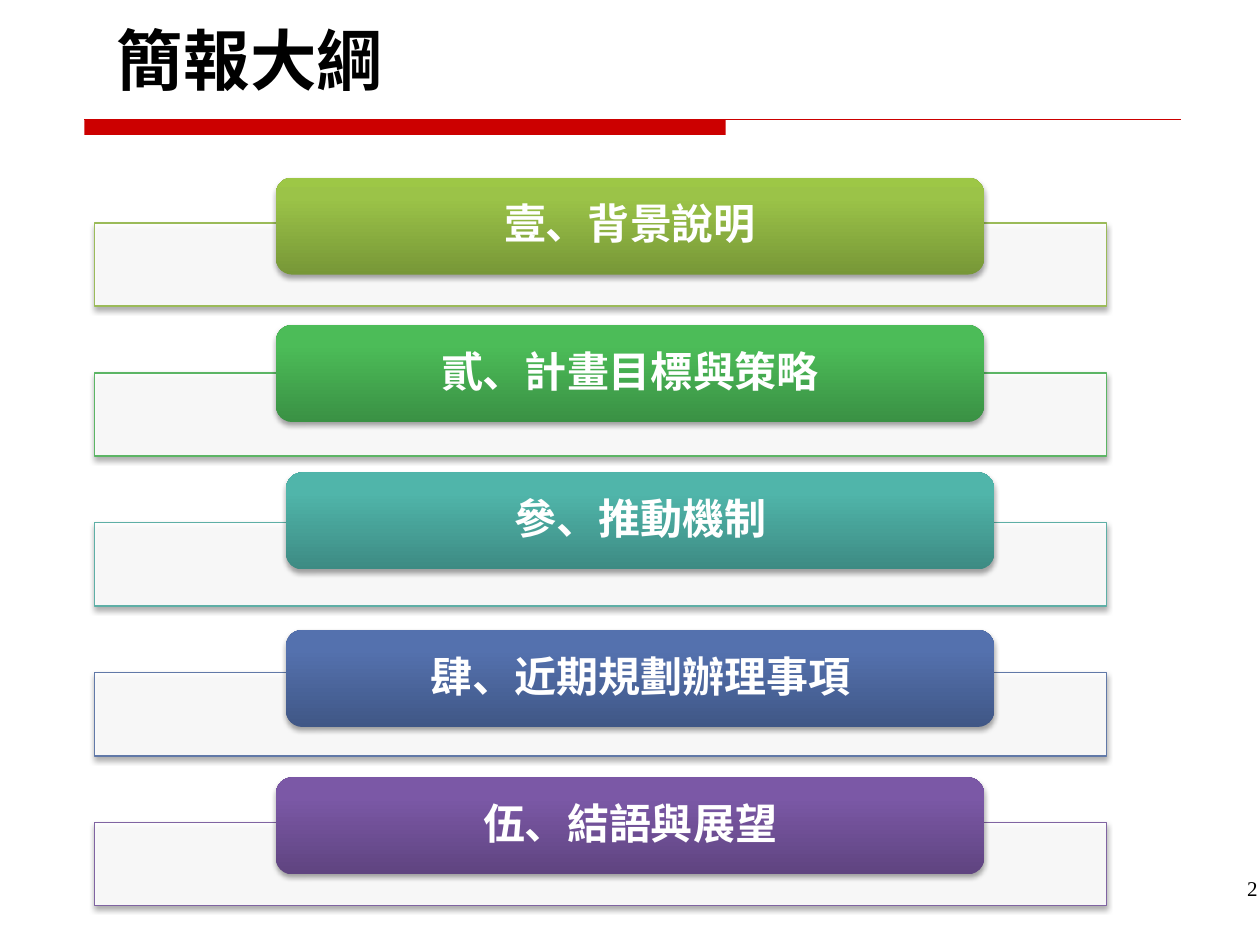
from lxml import etree
from pptx import Presentation
from pptx.dml.color import RGBColor
from pptx.enum.shapes import MSO_CONNECTOR, MSO_SHAPE
from pptx.enum.text import MSO_ANCHOR, PP_ALIGN
from pptx.oxml.ns import qn
from pptx.util import Inches, Pt
from copy import deepcopy

RECTANGLE = MSO_SHAPE.RECTANGLE
ROUNDED = MSO_SHAPE.ROUNDED_RECTANGLE
STRAIGHT = MSO_CONNECTOR.STRAIGHT
TOP, MIDDLE, BOTTOM = MSO_ANCHOR.TOP, MSO_ANCHOR.MIDDLE, MSO_ANCHOR.BOTTOM
LEFT, CENTER, RIGHT = PP_ALIGN.LEFT, PP_ALIGN.CENTER, PP_ALIGN.RIGHT

CJK_FONT = "Noto Sans CJK SC"
RED = "CC0000"
BAR_LEFT, BAR_TOP, BAR_WIDTH, BAR_HEIGHT = 0.75, 1.77, 8.03, 0.66
ROW_STEP = 1.19
LABEL_WIDTH, LABEL_HEIGHT = 5.62, 0.77
STOP_POSITIONS = (0, 0.8, 1)

SECTIONS = [
    ("壹、背景說明", 2.19, 1.41, "9BBB59", ("779737", "9BC348", "9DC746")),
    ("貳、計畫目標與策略", 2.19, 2.58, "5CB565", ("3A9144", "4CBC58", "4ABF57")),
    ("參、推動機制", 2.27, 3.75, "5EAFA6", ("3D8B83", "50B5AA", "4EB8AC")),
    ("肆、近期規劃辦理事項", 2.27, 5, "6179A8", ("405786", "5471AE", "5271B0")),
    ("伍、結語與展望", 2.19, 6.17, "8064A2", ("5F4480", "7B58A6", "7C57A8")),
]


def rgb(value):
    return RGBColor.from_string(value)


def write_text(shape, text, size, font=CJK_FONT, color="000000", bold=False,
               align=LEFT, anchor=TOP, side=0.1, edge=0.05, spacing=None):
    frame = shape.text_frame
    frame.word_wrap = True
    frame.vertical_anchor = anchor
    frame.margin_left = frame.margin_right = Inches(side)
    frame.margin_top = frame.margin_bottom = Inches(edge)
    para = frame.paragraphs[0]
    para.alignment = align
    para.line_spacing = spacing
    span = para.add_run()
    span.text = text
    span.font.size = Pt(size)
    span.font.bold = bold
    span.font.name = font
    span.font.color.rgb = rgb(color)
    properties = span._r.get_or_add_rPr()
    etree.SubElement(properties, qn("a:ea"), typeface=font)


def add_text(page, box, text, size, **style):
    shape = page.shapes.add_textbox(*map(Inches, box))
    write_text(shape, text, size, **style)


def add_block(page, kind, box):
    shape = page.shapes.add_shape(kind, *map(Inches, box))
    shape.shadow.inherit = False
    shape.line.fill.background()
    return shape


def fill_solid(shape, color, opacity=100):
    shape.fill.solid()
    shape.fill.fore_color.rgb = rgb(color)
    if opacity < 100:
        tint = shape._element.spPr.find(qn("a:solidFill")).find(qn("a:srgbClr"))
        etree.SubElement(tint, qn("a:alpha"), val=str(opacity * 1000))


def fill_gradient(shape, colors):
    shape.fill.gradient()
    shape.fill.gradient_angle = 90
    stops = shape._element.spPr.find(".//" + qn("a:gsLst"))
    stops.append(deepcopy(stops[-1]))
    for stop, position, color in zip(shape.fill.gradient_stops, STOP_POSITIONS, colors):
        stop.position = position
        stop.color.rgb = rgb(color)


def cast_shadow(shape):
    effects = shape._element.spPr.find(qn("a:effectLst"))
    shadow = etree.SubElement(
        effects, qn("a:outerShdw"), blurRad=str(Pt(3.1)), dist=str(Pt(1.8)),
        dir="5400000", rotWithShape="0")
    tint = etree.SubElement(shadow, qn("a:srgbClr"), val="000000")
    etree.SubElement(tint, qn("a:alpha"), val="35000")


def add_rule(page, left, top, right, color):
    rule = page.shapes.add_connector(
        STRAIGHT, Inches(left), Inches(top), Inches(right), Inches(top))
    rule.line.color.rgb = rgb(color)
    rule.line.width = Pt(0.75)
    etree.SubElement(rule._element.spPr, qn("a:effectLst"))


def add_header(page):
    fill_solid(add_block(page, RECTANGLE, (0.67, 0.95, 5.09, 0.12)), RED)
    add_rule(page, 0.67, 0.95, 9.37, RED)
    add_text(page, (0.83, -0.08, 8.51, 0.91), "簡報大綱", 38, bold=True, anchor=BOTTOM)


def add_section(page, row, title, left, top, outline, colors):
    bar = add_block(page, RECTANGLE,
                    (BAR_LEFT, BAR_TOP + row * ROW_STEP, BAR_WIDTH, BAR_HEIGHT))
    fill_solid(bar, "FFFFFF", opacity=90)
    bar.line.color.rgb = rgb(outline)
    bar.line.width = Pt(0.75)
    cast_shadow(bar)
    label = add_block(page, ROUNDED, (left, top, LABEL_WIDTH, LABEL_HEIGHT))
    fill_gradient(label, colors)
    cast_shadow(label)
    write_text(label, title, 24, color="FFFFFF", bold=True, align=CENTER,
               anchor=MIDDLE, side=0.21, edge=0, spacing=0.9)


def main():
    deck = Presentation()
    deck.slide_width, deck.slide_height = Inches(10), Inches(7.5)
    page = deck.slides.add_slide(deck.slide_layouts[6])
    add_header(page)
    for row, section in enumerate(SECTIONS):
        add_section(page, row, *section)
    add_text(page, (9.57, 6.9, 0.51, 0.52), "2", 12,
             font="Times New Roman", align=RIGHT)
    deck.save("out.pptx")


if __name__ == "__main__":
    main()
